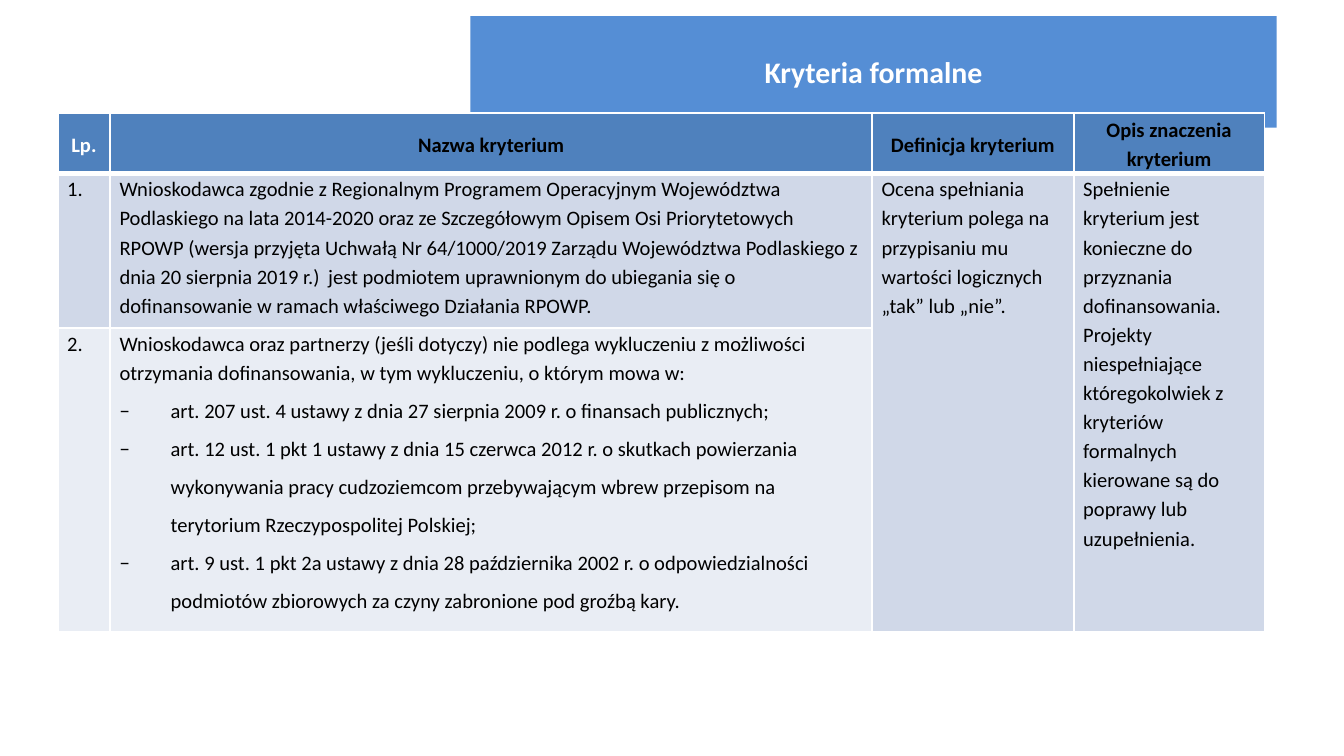
from lxml.etree import SubElement
from pptx import Presentation
from pptx.dml.color import RGBColor
from pptx.enum.text import MSO_ANCHOR as Anchor, MSO_AUTO_SIZE as AutoSize, PP_ALIGN as Align
from pptx.oxml import parse_xml
from pptx.oxml.ns import nsdecls, qn
from pptx.util import Inches, Pt

COLORS = {"title": "558ED5", "header": "4F81BD", "first": "D0D8E8", "second": "E9EDF4",
          "white": "FFFFFF", "black": "000000"}
TITLE = "Kryteria formalne"
HEADERS = ["Lp.", "Nazwa kryterium", "Definicja kryterium", "Opis znaczenia kryterium"]
APPLICANT = [
    ("Wnioskodawca zgodnie z Regionalnym Programem Operacyjnym Województwa Podlaskiego na lata "
     "2014-2020 oraz ze Szczegółowym Opisem Osi Priorytetowych RPOWP (wersja przyjęta Uchwałą "
     "Nr 64/1000/2019 Zarządu Województwa Podlaskiego z dnia 20 sierpnia 2019 r.) ", 11),
    (" ", 8),
    ("jest podmiotem uprawnionym do ubiegania się o dofinansowanie w ramach właściwego "
     "Działania RPOWP.", 11),
]
EXCLUSION = ("Wnioskodawca oraz partnerzy (jeśli dotyczy) nie podlega wykluczeniu z możliwości "
             "otrzymania dofinansowania, w tym wykluczeniu, o którym mowa w:")
ACTS = [
    "art. 207 ust. 4 ustawy z dnia 27 sierpnia 2009 r. o finansach publicznych;",
    "art. 12 ust. 1 pkt 1 ustawy z dnia 15 czerwca 2012 r. o skutkach powierzania wykonywania "
    "pracy cudzoziemcom przebywającym wbrew przepisom na terytorium Rzeczypospolitej Polskiej;",
    "art. 9 ust. 1 pkt 2a ustawy z dnia 28 października 2002 r. o odpowiedzialności podmiotów "
    "zbiorowych za czyny zabronione pod groźbą kary.",
]
DEFINITION = ("Ocena spełniania kryterium polega na przypisaniu mu wartości logicznych "
              "„tak” lub „nie”.")
MEANING = ("Spełnienie kryterium jest konieczne do przyznania dofinansowania. Projekty "
           "niespełniające któregokolwiek z kryteriów formalnych kierowane są do poprawy "
           "lub uzupełnienia.")
ROWS = [
    [[header] for header in HEADERS],
    [["1."], [APPLICANT], [DEFINITION], [MEANING]],
    [["2."], [EXCLUSION, *ACTS], [], []],
]
ROW_FILLS = ["header", "first", "second"]
SLIDE_WIDTH = 10
COLUMN_WIDTHS = [0.39, 5.67, 1.5, 1.42]
ROW_HEIGHTS = [0.45, 1.15, 2.26]
MERGED_COLUMNS = [2, 3]
CELL_FORMAT = {"margin_left": Inches(0.07), "margin_right": Inches(0.07),
               "margin_top": 0, "margin_bottom": 0}


def apply_format(target, values):
    for name, value in values.items():
        setattr(target, name, value)


def add_run(paragraph, text, size, color, bold):
    run = paragraph.add_run()
    run.text = text
    apply_format(run.font, {"name": "Calibri", "size": Pt(size), "bold": bold})
    run.font.color.rgb = RGBColor.from_string(COLORS[color])


def add_bullet(paragraph):
    properties = paragraph._p.get_or_add_pPr()
    properties.set("marL", str(Inches(0.38)))
    properties.set("indent", str(-Inches(0.38)))
    SubElement(properties, qn("a:buFont")).set("typeface", "Calibri")
    SubElement(properties, qn("a:buChar")).set("char", "−")


def add_borders(cell, row):
    widths = {"L": 1, "R": 1, "T": 3 if row == 1 else 1, "B": 3 if row == 0 else 1}
    for index, (side, width) in enumerate(widths.items()):
        line = parse_xml(f'<a:ln{side} {nsdecls("a")} w="{Pt(width)}"><a:solidFill>'
                         f'<a:srgbClr val="{COLORS["white"]}"/></a:solidFill></a:ln{side}>')
        cell._tc.get_or_add_tcPr().insert(index, line)


def fill_cell(cell, row, column, content):
    header = row == 0
    apply_format(cell, CELL_FORMAT)
    cell.vertical_anchor = Anchor.MIDDLE if header else Anchor.TOP
    fill = "first" if column in MERGED_COLUMNS and not header else ROW_FILLS[row]
    cell.fill.solid()
    cell.fill.fore_color.rgb = RGBColor.from_string(COLORS[fill])
    add_borders(cell, row)
    alignment = Align.CENTER if header else Align.JUSTIFY if column == 0 else Align.LEFT
    color = "white" if header and column == 0 else "black"
    frame = cell.text_frame
    for index, text in enumerate(content):
        paragraph = frame.add_paragraph() if index else frame.paragraphs[0]
        apply_format(paragraph, {"alignment": alignment, "line_spacing": 1.5 if index else 1.15})
        if index:
            add_bullet(paragraph)
        for part, size in [(text, 11)] if isinstance(text, str) else text:
            add_run(paragraph, part, size, color, header)


def add_title(slide):
    title = slide.shapes.title
    apply_format(title, {"left": Inches(3.5), "top": Inches(0.12),
                         "width": Inches(6), "height": Inches(0.83)})
    title.fill.solid()
    title.fill.fore_color.rgb = RGBColor.from_string(COLORS["title"])
    apply_format(title.text_frame, {"auto_size": AutoSize.NONE, "word_wrap": True,
                                    "vertical_anchor": Anchor.MIDDLE})
    paragraph = title.text_frame.paragraphs[0]
    paragraph.alignment = Align.CENTER
    add_run(paragraph, TITLE, 16, "white", True)


def add_criteria_table(slide):
    table = slide.shapes.add_table(
        len(ROWS), len(HEADERS), Inches(0.43), Inches(0.84),
        Inches(sum(COLUMN_WIDTHS)), Inches(sum(ROW_HEIGHTS))).table
    for column, width in zip(table.columns, COLUMN_WIDTHS):
        column.width = Inches(width)
    for row, height in zip(table.rows, ROW_HEIGHTS):
        row.height = Inches(height)
    for column in MERGED_COLUMNS:
        table.cell(1, column).merge(table.cell(2, column))
    for row, contents in enumerate(ROWS):
        for column, content in enumerate(contents):
            fill_cell(table.cell(row, column), row, column, content)


def main():
    """Build the slide with the formal criteria table."""
    presentation = Presentation()
    apply_format(presentation, {"slide_width": Inches(SLIDE_WIDTH),
                                "slide_height": Inches(SLIDE_WIDTH * 9 / 16)})
    slide = presentation.slides.add_slide(presentation.slide_layouts[5])
    add_title(slide)
    add_criteria_table(slide)
    presentation.save("out.pptx")


if __name__ == "__main__":
    main()
